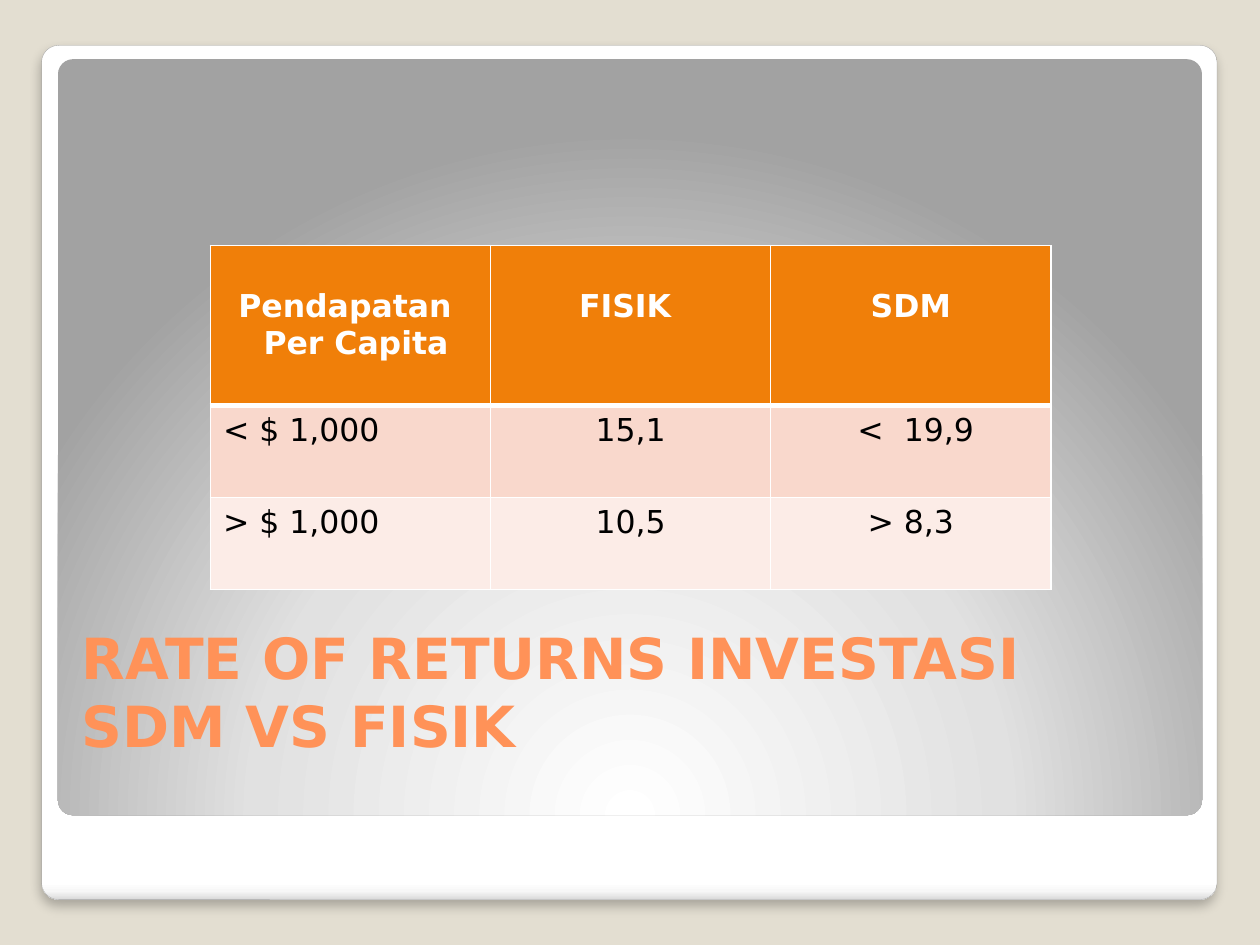
from pptx import Presentation
from pptx.dml.color import RGBColor as RGB
from pptx.enum.shapes import MSO_SHAPE as Shape
from pptx.enum.text import MSO_ANCHOR as Anchor, PP_ALIGN as Align
from pptx.oxml import parse_xml
from pptx.oxml.ns import nsdecls
from pptx.util import Inches, Pt

THEME = dict(
    font="DejaVu Sans", back="E3DED1", edge="A4A4A4", title="FF9258", grid="FFFFFF",
    head=dict(fill="F07F09", ink="FFFFFF", bold=True, top=0.34, rule=3),
    rows=[dict(fill=tint, ink="000000", bold=False, top=0.05, rule=1)
          for tint in ("F9D8CC", "FCECE7")],
    big=32.4, small=18,
)
TITLE = ["RATE OF RETURNS INVESTASI", "SDM VS FISIK"]
TABLE = [
    ["Pendapatan \n Per Capita", "FISIK ", "SDM"],
    ["< $ 1,000", "15,1", " <  19,9"],
    ["> $ 1,000", "10,5", "> 8,3"],
]
HEIGHTS = [1.27, 0.73, 0.73]
CARD = [(0, "FFFFFF"), (98, "FFFFFF"), (99, "F7F7F7"), (100, "DADADA")]
GLOW = [(0, "FFFFFF"), (55, "E1E1E1"), (100, "A2A2A2")]
DOWN = '<a:lin ang="5400000" scaled="0"/>'
ROUND = ('<a:path path="circle"><a:fillToRect l="50000" t="175000" '
         'r="50000" b="-75000"/></a:path>')
SHADE = (f'<a:effectLst {nsdecls("a")}><a:outerShdw blurRad="{Pt(6)}" dist="{Pt(4)}" '
         'dir="5400000" algn="t" rotWithShape="0"><a:srgbClr val="000000">'
         '<a:alpha val="25000"/></a:srgbClr></a:outerShdw></a:effectLst>')


def style(item, **vals):
    for key, val in vals.items():
        setattr(item, key, val)


def ink(font, size, tone, bold):
    style(font, name=THEME["font"], size=Pt(size), bold=bold)
    font.color.rgb = RGB.from_string(tone)


def panel(slide, box, stops, mode):
    shape = slide.shapes.add_shape(Shape.ROUNDED_RECTANGLE, *map(Inches, box))
    shape.adjustments[0] = 0.02
    shape.shadow.inherit = False
    shape.line.fill.background()
    marks = "".join(f'<a:gs pos="{pos * 1000}"><a:srgbClr val="{tone}"/></a:gs>'
                    for pos, tone in stops)
    grad = parse_xml(f'<a:gradFill {nsdecls("a")} rotWithShape="1">'
                     f'<a:gsLst>{marks}</a:gsLst>{mode}</a:gradFill>')
    shape._element.spPr.find("./{*}prstGeom").addnext(grad)
    return shape


def border(cell, rules):
    props = cell._tc.get_or_add_tcPr()
    for slot, (side, width) in enumerate(rules.items()):
        props.insert(slot, parse_xml(
            f'<a:{side} {nsdecls("a")} w="{Pt(width)}"><a:solidFill>'
            f'<a:srgbClr val="{THEME["grid"]}"/></a:solidFill></a:{side}>'))


def head(slide):
    title = slide.shapes.title
    style(title, left=Inches(0.55), top=Inches(5.45),
          width=Inches(8.95), height=Inches(1.15))
    frame = title.text_frame
    style(frame, text="\v".join(TITLE), word_wrap=True,
          vertical_anchor=Anchor.BOTTOM, margin_bottom=Inches(0.58))
    para = frame.paragraphs[0]
    para.alignment = Align.LEFT
    for run in para.runs:
        ink(run.font, THEME["big"], THEME["title"], True)
    slide.shapes._spTree.append(title._element)


def grid(slide):
    box = map(Inches, (1.67, 1.95, 6.67, sum(HEIGHTS)))
    table = slide.shapes.add_table(len(TABLE), len(TABLE[0]), *box).table
    looks = [THEME["head"], *THEME["rows"]]
    for row, (texts, tall, look) in enumerate(zip(TABLE, HEIGHTS, looks)):
        table.rows[row].height = Inches(tall)
        above = looks[row - 1]["rule"] if row else 1
        for col, text in enumerate(texts):
            cell = table.cell(row, col)
            style(cell, text=text, margin_top=Inches(look["top"]))
            cell.fill.solid()
            cell.fill.fore_color.rgb = RGB.from_string(look["fill"])
            border(cell, dict(lnL=1, lnR=1, lnT=above, lnB=look["rule"]))
            for para in cell.text_frame.paragraphs:
                para.alignment = Align.LEFT if row and not col else Align.CENTER
                for run in para.runs:
                    ink(run.font, THEME["small"], look["ink"], look["bold"])


def main():
    deck = Presentation()
    style(deck, slide_width=Inches(10), slide_height=Inches(7.5))
    slide = deck.slides.add_slide(deck.slide_layouts[5])
    back = slide.background.fill
    back.solid()
    back.fore_color.rgb = RGB.from_string(THEME["back"])

    card = panel(slide, (0.33, 0.36, 9.33, 6.78), CARD, DOWN)
    card.line.color.rgb = RGB.from_string(THEME["edge"])
    card.line.width = Pt(0.16)
    props = card._element.spPr
    props.replace(props.find("./{*}effectLst"), parse_xml(SHADE))
    panel(slide, (0.46, 0.47, 9.08, 6), GLOW, ROUND)
    head(slide)
    grid(slide)
    deck.save("out.pptx")


if __name__ == "__main__":
    main()
